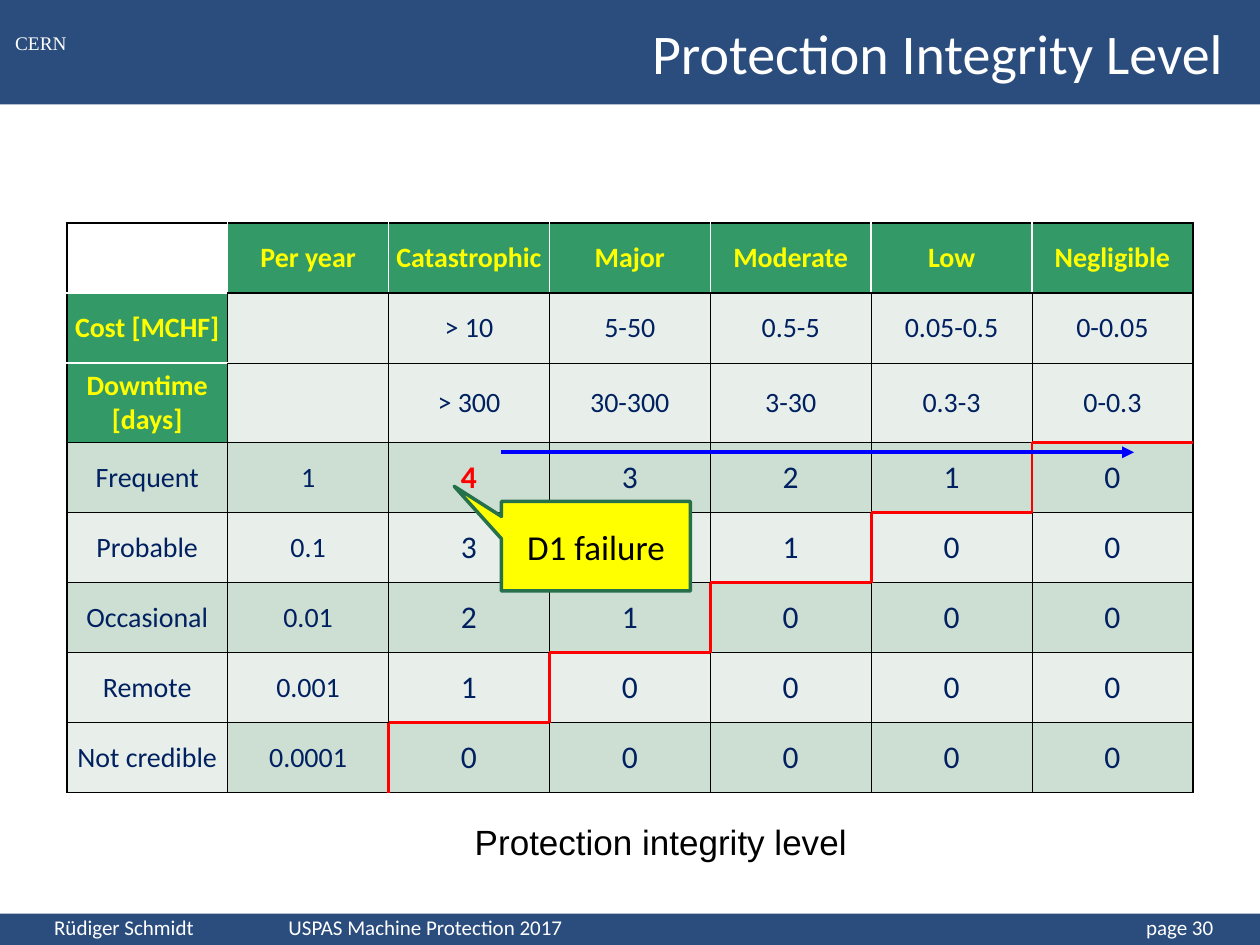
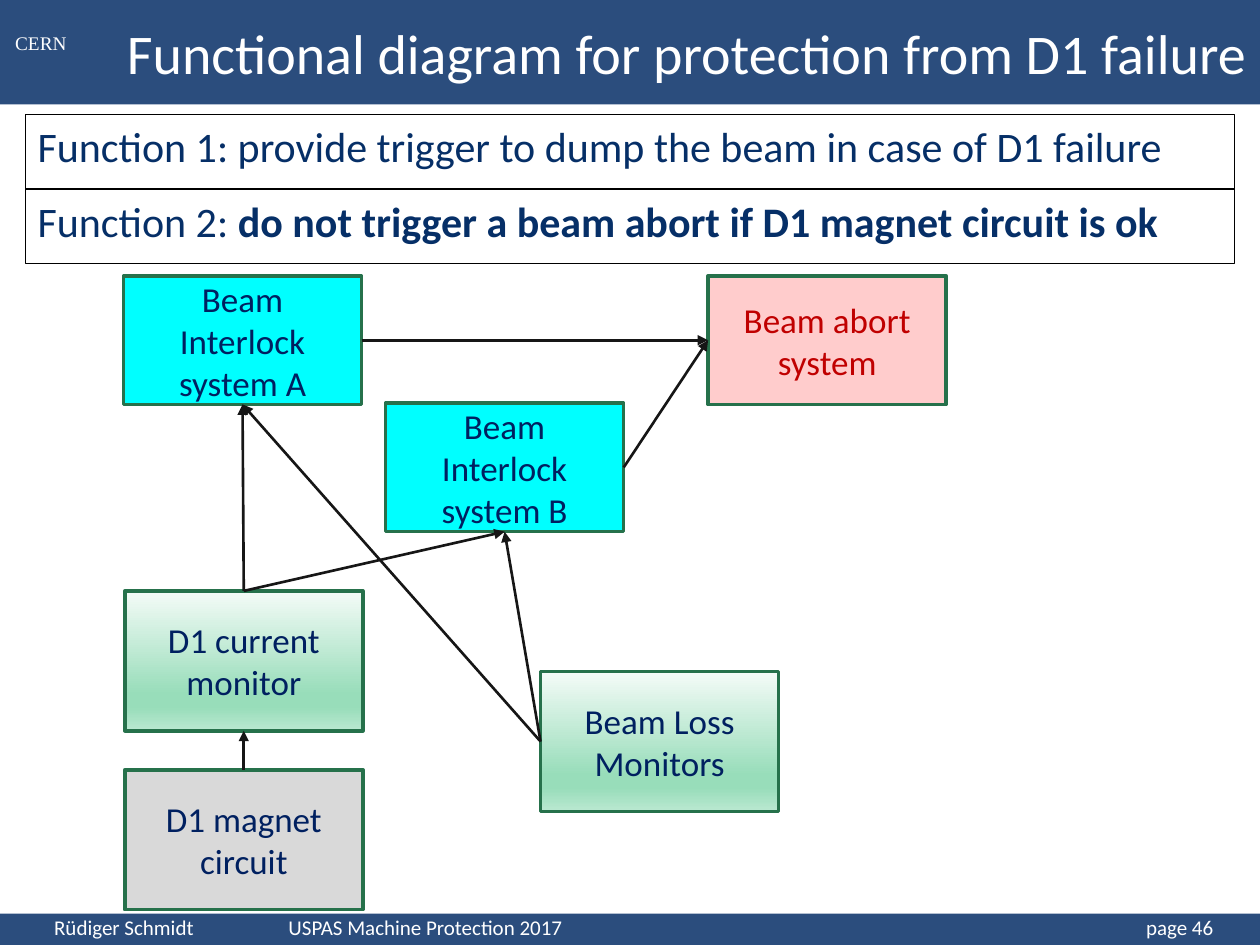
from dataclasses import dataclass

from lxml.etree import SubElement
from pptx import Presentation
from pptx.dml.color import RGBColor
from pptx.enum.shapes import MSO_CONNECTOR, MSO_SHAPE
from pptx.enum.text import MSO_ANCHOR, PP_ALIGN
from pptx.oxml import parse_xml
from pptx.oxml.ns import nsdecls, qn
from pptx.util import Inches, Pt


@dataclass(frozen=True)
class Theme:
    band: str = "062F67"
    white: str = "FFFFFF"
    black: str = "000000"
    navy: str = "002060"
    green: str = "339966"
    outline: str = "26714B"
    yellow: str = "FFFF00"
    red: str = "FF0000"
    blue: str = "0000FF"
    arrow: str = "161616"
    pale_row: str = "E8EFEA"
    dark_row: str = "CDDED3"
    cyan: str = "00FFFF"
    pink: str = "FFCCCC"
    dark_red: str = "C00000"
    grey: str = "D9D9D9"
    mint: tuple = ((0, "F4FBF7"), (74, "98DDBA"), (83, "98DDBA"), (100, "BAE8D1"))
    font: str = "Calibri"
    title_size: int = 32
    function_size: int = 24
    body_size: int = 20
    level_size: int = 18
    table_size: int = 16
    footer_size: int = 12
    lab_size: int = 11


theme = Theme()
rgb = RGBColor.from_string

# Grid: 100 columns by 75 rows of square units
COLUMNS, ROWS = 100, 75
UNIT = Inches(0.1)
BAND_H, FOOTER_H = 8.3, 2.5

deck = Presentation()
deck.slide_width, deck.slide_height = COLUMNS * UNIT, ROWS * UNIT


def add_box(slide, area, runs=(), size=theme.body_size, colour=theme.navy, kind=None,
            fill=None, line=None, align=PP_ALIGN.CENTER, anchor=MSO_ANCHOR.MIDDLE,
            font=theme.font):
    """Text box, or preset shape when kind is given; runs are (text, bold) pairs."""
    place = [round(v * UNIT) for v in area]
    if kind is None:
        box = slide.shapes.add_textbox(*place)
    else:
        box = slide.shapes.add_shape(kind, *place)
        box.shadow.inherit = False
        box.fill.solid()
        box.fill.fore_color.rgb = rgb(fill)
        if line:
            box.line.color.rgb, box.line.width = rgb(line[0]), Pt(line[1])
        else:
            box.line.fill.background()
    frame = box.text_frame
    frame.word_wrap, frame.vertical_anchor = True, anchor
    paragraph = frame.paragraphs[0]
    paragraph.alignment = align
    for text, bold in runs:
        run = paragraph.add_run()
        run.text = text
        if bold:
            run.font.bold = True
    if runs:
        paragraph.font.name, paragraph.font.size = font, Pt(size)
        paragraph.font.color.rgb = rgb(colour)
    return box


def add_line(slide, start, end, colour, width, arrow=False):
    ends = [round(v * UNIT) for v in (*start, *end)]
    connector = slide.shapes.add_connector(MSO_CONNECTOR.STRAIGHT, *ends)
    connector.line.color.rgb, connector.line.width = rgb(colour), Pt(width)
    if arrow:
        SubElement(connector.line._get_or_add_ln(), qn("a:tailEnd"), type="triangle")
    SubElement(connector._element.spPr, qn("a:effectLst"))
    return connector


# Shared frame: bands, lab name, title, footer
pages = []
for title, right_inset, number in [
    ("Protection Integrity Level", 2.9, 30),
    ("Functional diagram for protection from D1 failure", 1, 46),
]:
    page = deck.slides.add_slide(deck.slide_layouts[6])
    pages.append(page)
    for top, height in [(0, BAND_H), (ROWS - FOOTER_H, FOOTER_H)]:
        band = add_box(page, (0, top, COLUMNS, height), kind=MSO_SHAPE.RECTANGLE,
                       fill=theme.band)
        tint = band._element.spPr.find(".//" + qn("a:srgbClr"))
        SubElement(tint, qn("a:alpha"), val="85000")
    add_box(page, (0, 2, 6.5, 2.9), [("CERN", False)], theme.lab_size, theme.white,
            anchor=MSO_ANCHOR.TOP, font="Times New Roman")
    heading = add_box(page, (BAND_H, 0, COLUMNS - BAND_H, BAND_H), [(title, False)],
                      theme.title_size, theme.white, align=PP_ALIGN.RIGHT)
    heading.text_frame.margin_right = round(right_inset * UNIT)
    footer = add_box(page, (0, ROWS - FOOTER_H, 98.3, 2.6),
                     [(f"Rüdiger Schmidt\tUSPAS Machine Protection 2017\tpage {number}", False)],
                     theme.footer_size, theme.white, align=PP_ALIGN.LEFT,
                     anchor=MSO_ANCHOR.BOTTOM)
    footer.text_frame.margin_left = round(4.3 * UNIT)
    tabs = parse_xml(f"<a:tabLst {nsdecls('a')}/>")
    for position, side in [(18.6, "l"), (92, "r")]:
        SubElement(tabs, qn("a:tab"), pos=str(round(position * UNIT)), algn=side)
    footer.text_frame.paragraphs[0]._p.get_or_add_pPr().insert(0, tabs)

levels, diagram = pages

# Integrity table: levels drop by one per row and per column
severities = ["Catastrophic", "Major", "Moderate", "Low", "Negligible"]
frequencies = [("Frequent", "1"), ("Probable", "0.1"), ("Occasional", "0.01"),
               ("Remote", "0.001"), ("Not credible", "0.0001")]
records = [
    ["", "Per year", *severities],
    ["Cost [MCHF]", "", "> 10", "5-50", "0.5-5", "0.05-0.5", "0-0.05"],
    ["Downtime [days]", "", "> 300", "30-300", "3-30", "0.3-3", "0-0.3"],
]
for step, (name, rate) in enumerate(frequencies):
    records.append([name, rate, *(str(max(0, 4 - step - i)) for i in range(5))])

LEFT, TOP, CELL_W, CELL_H, TALL_H = 5.3, 17.7, 12.77, 5.56, 6.3
n_rows, n_cols = len(records), len(records[0])
matrix = levels.shapes.add_table(
    n_rows, n_cols, *(round(v * UNIT) for v in
                      (LEFT, TOP, n_cols * CELL_W, (n_rows - 1) * CELL_H + TALL_H))).table
matrix.first_row = matrix.horz_banding = False
for column in matrix.columns:
    column.width = round(CELL_W * UNIT)
for r, record in enumerate(records):
    matrix.rows[r].height = round((TALL_H if r == 2 else CELL_H) * UNIT)
    for c, text in enumerate(record):
        cell = matrix.cell(r, c)
        cell.margin_left = cell.margin_right = cell.margin_top = cell.margin_bottom = 0
        cell.vertical_anchor = MSO_ANCHOR.MIDDLE
        # Borders: white inside the headings, heavier around the blocks
        for side, edge in [("L", c), ("R", c + 1), ("T", r), ("B", r + 1)]:
            if side in "LR":
                pale = r == 0 and 0 < edge < n_cols
                heavy = r == 0 or edge in (0, 1, n_cols)
            else:
                pale = c == 0 and edge in (1, 2)
                heavy = pale or edge in (0, 1, 3, n_rows)
            border = SubElement(cell._tc.get_or_add_tcPr(), qn(f"a:ln{side}"),
                                w=str(Pt(1 if heavy else 0.5)))
            ink = SubElement(border, qn("a:solidFill"))
            SubElement(ink, qn("a:srgbClr"), val=theme.white if pale else theme.black)
        # Fills
        is_heading = r == 0 or (c == 0 and r < 3)
        is_dark = r >= 3 and r % 2 == 1 and (r, c) != (n_rows - 1, 0)
        if (r, c) == (0, 0):
            cell.fill.background()
        else:
            cell.fill.solid()
            cell.fill.fore_color.rgb = rgb(theme.green if is_heading else
                                           theme.dark_row if is_dark else theme.pale_row)
        # Text
        if text:
            is_d1 = (r, c) == (3, 2)
            entry = cell.text_frame.paragraphs[0]
            entry.text, entry.alignment = text, PP_ALIGN.CENTER
            entry.font.name = theme.font
            entry.font.size = Pt(theme.level_size if r >= 3 and c >= 2 else theme.table_size)
            entry.font.bold = is_heading or is_d1
            entry.font.color.rgb = rgb(theme.yellow if is_heading else
                                       theme.red if is_d1 else theme.navy)

# Red staircase between levels above zero and zero
table_bottom = TOP + (n_rows - 1) * CELL_H + TALL_H
for step in range(len(frequencies)):
    x, y = LEFT + (step + 2) * CELL_W, table_bottom - step * CELL_H
    add_line(levels, (x, y), (x, y - CELL_H), theme.red, 1.5)
    add_line(levels, (x, y - CELL_H), (x + CELL_W, y - CELL_H), theme.red, 1.5)

# D1 callout, caption and severity arrow
callout = add_box(levels, (39.8, 39.8, 15, 7.1), [("D1 failure", False)], colour=theme.black,
                  kind=MSO_SHAPE.RECTANGULAR_CALLOUT, fill=theme.yellow,
                  line=(theme.outline, 2))
callout.adjustments[0], callout.adjustments[1] = -0.75, -0.67
add_box(levels, (18.7, 64.6, 67.5, 4.4), [("Protection integrity level", False)],
        colour=theme.black, anchor=MSO_ANCHOR.TOP, font="Arial")
add_line(levels, (39.8, 35.9), (90, 35.9), theme.blue, 2.25, arrow=True)

# Diagram blocks
BLOCK_W, SYSTEM_H, SOURCE_H = 18.9, 10.2, 11.1
blocks = {}
for text, x, y, height, fill, colour in [
    ("Beam Interlock system A", 9.8, 21.9, SYSTEM_H, theme.cyan, theme.navy),
    ("Beam abort system", 56.2, 21.9, SYSTEM_H, theme.pink, theme.dark_red),
    ("Beam Interlock system B", 30.6, 32, SYSTEM_H, theme.cyan, theme.navy),
    ("Beam Loss Monitors", 42.9, 53.3, SOURCE_H, theme.mint, theme.navy),
    ("D1 current monitor", 9.9, 46.9, SOURCE_H, theme.mint, theme.navy),
    ("D1 magnet circuit", 9.9, 61.1, SOURCE_H, theme.grey, theme.navy),
]:
    shaded = fill is theme.mint
    block = add_box(diagram, (x, y, BLOCK_W, height), [(text, False)], colour=colour,
                    kind=MSO_SHAPE.RECTANGLE, fill=theme.white if shaded else fill,
                    line=(theme.outline, 2))
    if shaded:
        block.fill.gradient()
        block.fill.gradient_angle = 270
        stops = block._element.spPr.find(".//" + qn("a:gsLst"))
        for old_stop in list(stops):
            stops.remove(old_stop)
        for share, tone in fill:
            stop = SubElement(stops, qn("a:gs"), pos=str(share * 1000))
            SubElement(stop, qn("a:srgbClr"), val=tone)
    blocks[text] = block

# Signal arrows, joined at block sides
top_side, left_side, bottom_side, right_side = range(4)
for source, out_side, target, in_side in [
    ("Beam Interlock system A", right_side, "Beam abort system", left_side),
    ("Beam Interlock system B", right_side, "Beam abort system", left_side),
    ("D1 current monitor", top_side, "Beam Interlock system A", bottom_side),
    ("D1 current monitor", top_side, "Beam Interlock system B", bottom_side),
    ("Beam Loss Monitors", left_side, "Beam Interlock system A", bottom_side),
    ("Beam Loss Monitors", left_side, "Beam Interlock system B", bottom_side),
    ("D1 magnet circuit", top_side, "D1 current monitor", bottom_side),
]:
    signal = add_line(diagram, (0, 0), (0, 0), theme.arrow, 1.5, arrow=True)
    signal.begin_connect(blocks[source], out_side)
    signal.end_connect(blocks[target], in_side)

# Function statements
FUNCTION_H = 5.9
for i, runs in enumerate([
    [("Function 1: provide trigger to dump the beam in case of D1 failure", False)],
    [("Function 2: ", False),
     ("do not trigger a beam abort if D1 magnet circuit is ok", True)],
]):
    add_box(diagram, (2, 9.1 + i * FUNCTION_H, 96, FUNCTION_H), runs, theme.function_size,
            theme.band, kind=MSO_SHAPE.RECTANGLE, fill=theme.white,
            line=(theme.black, 0.75), align=PP_ALIGN.LEFT, anchor=MSO_ANCHOR.TOP)

deck.save("out.pptx")
